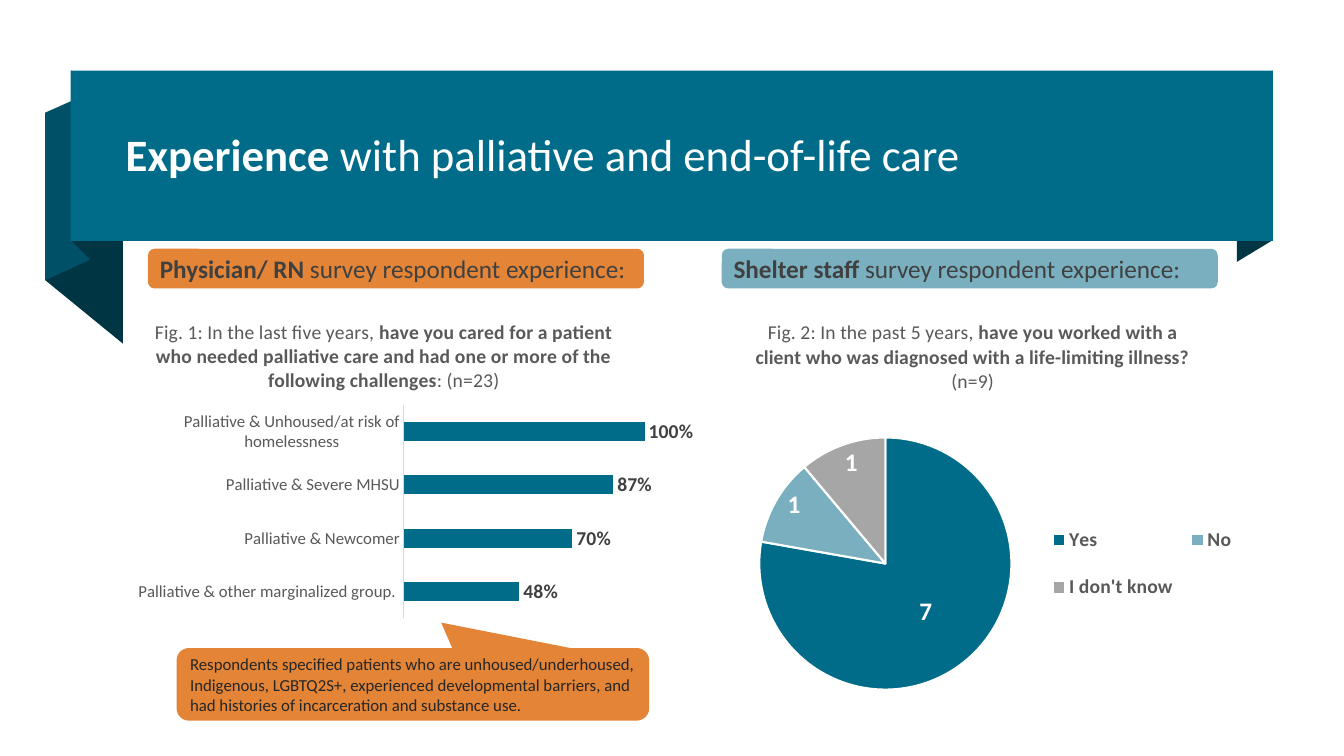
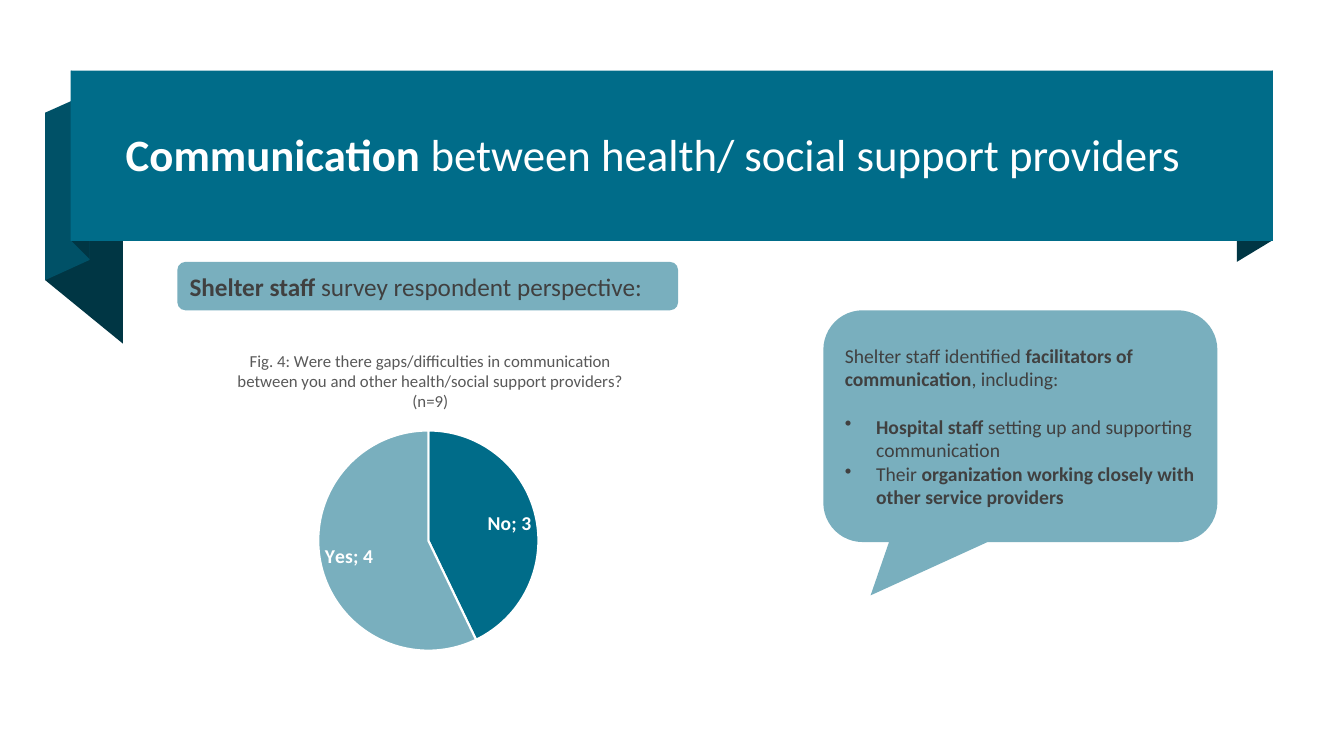
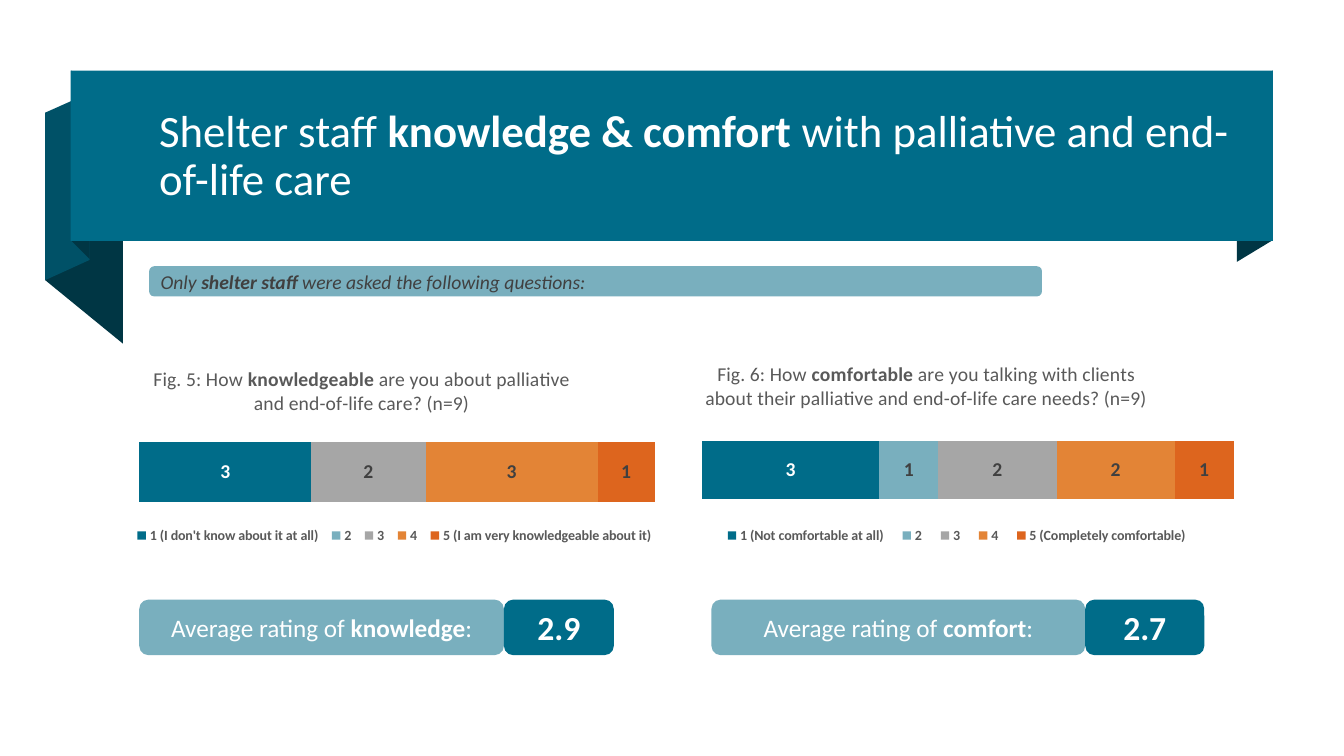
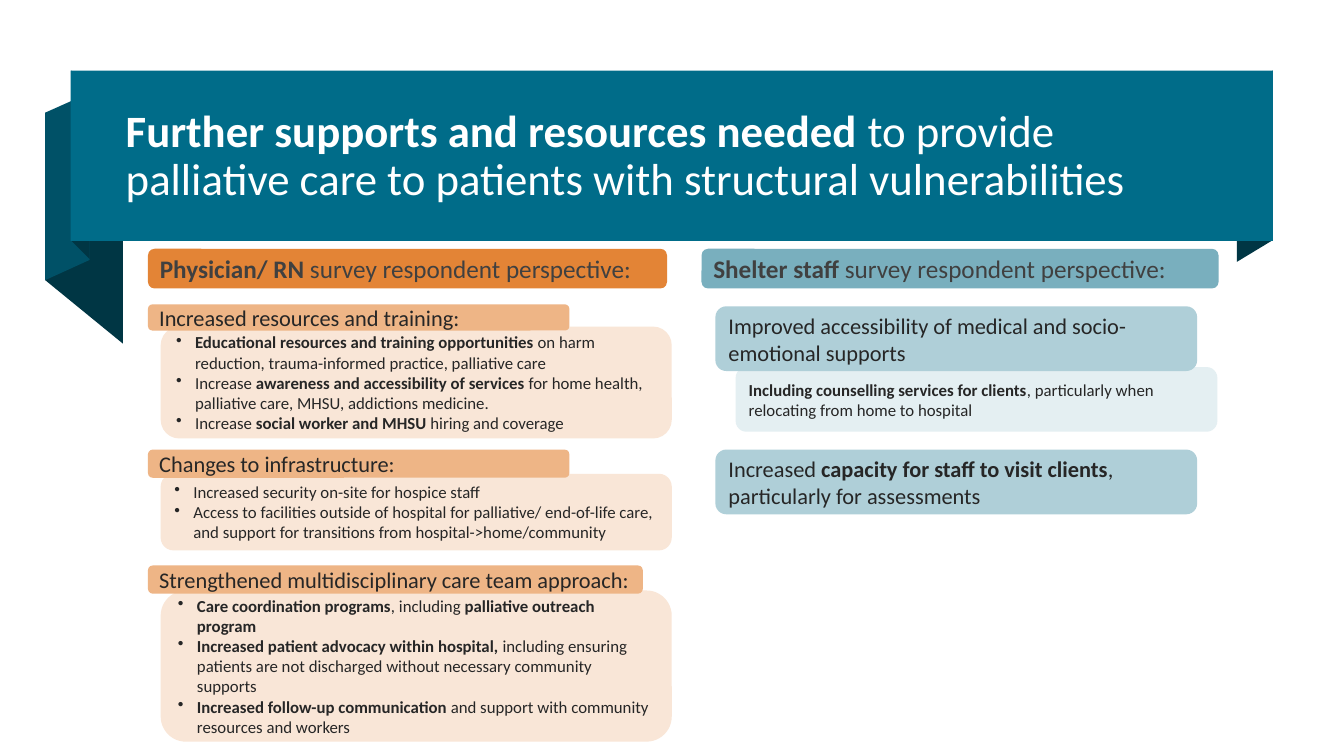
"""Builds four slides of survey results on palliative care."""
import dataclasses
import typing

import lxml.etree
import pptx
import pptx.chart.chart
import pptx.chart.data
import pptx.dml.color
import pptx.dml.fill
import pptx.enum.chart
import pptx.enum.shapes
import pptx.enum.text
import pptx.oxml
import pptx.oxml.ns
import pptx.slide
import pptx.text.text
import pptx.util

Cm = pptx.util.Cm
Pt = pptx.util.Pt
ShapeKind = pptx.enum.shapes.MSO_SHAPE
ChartKind = pptx.enum.chart.XL_CHART_TYPE
LabelPlace = pptx.enum.chart.XL_LABEL_POSITION
LegendPlace = pptx.enum.chart.XL_LEGEND_POSITION
Align = pptx.enum.text.PP_ALIGN

TEAL, DEEP_TEAL, DARK_TEAL = "006C89", "005167", "003644"
BLUE, LIGHT_BLUE, PALE_BLUE = "79AFBE", "AFCFD8", "E4EFF2"
ORANGE, LIGHT_ORANGE, PALE_ORANGE, RUST = "E38436", "EEB586", "F9E6D7", "DD651E"
GREY, AXIS_GREY, WHITE = "A6A6A6", "D9D9D9", "FFFFFF"
INK, TEXT_GREY, CHART_GREY = "262626", "404040", "595959"
FONT = "Calibri"

Area = tuple[float, float, float, float]

RIBBON_FOLDS = [
    (DARK_TEAL, [(32.08, 6.05), (31.17, 6.6), (31.17, 2.31), (32.08, 1.78)]),
    (DARK_TEAL, [(3.1, 8.66), (1.14, 7.06), (1.14, 2.84), (3.1, 4.45)]),
    (DEEP_TEAL, [(2.26, 6.55), (1.14, 7.06), (1.14, 2.84), (2.26, 2.34)]),
    (DARK_TEAL, [(2.26, 6.53), (1.8, 6.07), (1.8, 1.78), (2.26, 2.26)]),
]


@dataclasses.dataclass(frozen=True)
class Box:
    """A filled shape with text; ** marks bold."""

    area: Area
    fill: str
    lines: list[str]
    size: int
    color: str = INK
    kind: ShapeKind = ShapeKind.ROUNDED_RECTANGLE
    align: Align = Align.LEFT
    adjust: tuple[float, ...] = ()
    indent: float = 0
    first_bullet: int = 0
    bullet_gap: int = 0
    italic: bool = False


@dataclasses.dataclass(frozen=True)
class Series:
    """Values, fill colours and label colour of one series."""

    name: str
    values: list[float | None]
    colors: list[str]
    label_color: str = TEXT_GREY


@dataclasses.dataclass(frozen=True)
class Graph:
    """A chart; layouts are fractions of its frame."""

    area: Area
    kind: ChartKind
    title: str
    title_at: tuple[float, float]
    plot_at: Area
    categories: list[str]
    series: list[Series]
    label_place: LabelPlace
    title_size: int = 14
    label_size: int = 14
    number_format: str = "General"
    legend: LegendPlace | None = None
    legend_at: Area = (0, 0, 0, 0)
    legend_size: int = 10
    gap: int = 150
    name_labels: bool = False
    centred_points: tuple[int, ...] = ()


def rgb(color: str) -> pptx.dml.color.RGBColor:
    """Turn a hex string into a colour."""
    return pptx.dml.color.RGBColor.from_string(color)


def paint(fill: pptx.dml.fill.FillFormat, color: str) -> None:
    """Give a solid fill."""
    fill.solid()
    fill.fore_color.rgb = rgb(color)


def finish(shape: typing.Any, color: str) -> None:
    """Fill a shape and remove its line and shadow."""
    shape.shadow.inherit = False
    paint(shape.fill, color)
    shape.line.fill.background()


def style_font(font: pptx.text.text.Font, size: int, color: str,
               bold: bool = False, italic: bool = False) -> None:
    """Format a font."""
    formats = {"name": FONT, "size": Pt(size), "bold": bold, "italic": italic}
    for name, value in formats.items():
        setattr(font, name, value)
    font.color.rgb = rgb(color)


def write(para: typing.Any, text: str, size: int, color: str, italic: bool = False) -> None:
    """Write text in which ** switches bold on and off."""
    for number, piece in enumerate(text.split("**")):
        if piece:
            span = para.add_run()
            span.text = piece
            style_font(span.font, size, color, number % 2 == 1, italic)


def add_bullet(para: typing.Any, indent: float) -> None:
    """Give a paragraph a hanging bullet."""
    properties = para._p.get_or_add_pPr()
    properties.set("marL", str(Cm(indent)))
    properties.set("indent", str(-Cm(indent)))
    bullet = lxml.etree.SubElement(properties, pptx.oxml.ns.qn("a:buChar"))
    bullet.set("char", "•")


def add_box(page: pptx.slide.Slide, box: Box) -> None:
    """Draw a box and its text."""
    shape = page.shapes.add_shape(box.kind, *map(Cm, box.area))
    for number, value in enumerate(box.adjust):
        shape.adjustments[number] = value
    finish(shape, box.fill)
    frame = shape.text_frame
    frame.word_wrap = True
    frame.vertical_anchor = pptx.enum.text.MSO_ANCHOR.MIDDLE
    for number, line in enumerate(box.lines):
        para = frame.add_paragraph() if number else frame.paragraphs[0]
        para.alignment = box.align
        if box.indent and number >= box.first_bullet:
            if number == box.first_bullet and box.bullet_gap:
                para.space_before = Pt(box.bullet_gap)
            add_bullet(para, box.indent)
        write(para, line, box.size, box.color, box.italic)


def place(chart: pptx.chart.chart.Chart, query: str, index: int,
          fractions: tuple[float, ...], inner: bool = False) -> None:
    """Set the manual layout of one part of a chart."""
    part = chart.element.xpath(query)[0]
    for old in part.xpath("c:layout"):
        part.remove(old)
    names = ("x", "y", "w", "h")[:len(fractions)]
    items = '<c:layoutTarget val="inner"/>' if inner else ""
    items += "".join(f'<c:{name}Mode val="edge"/>' for name in names[:2])
    items += "".join(f'<c:{name} val="{value}"/>' for name, value in zip(names, fractions))
    part.insert(index, pptx.oxml.parse_xml(
        f'<c:layout {pptx.oxml.ns.nsdecls("c")}><c:manualLayout>{items}</c:manualLayout></c:layout>'))


def style_axes(chart: pptx.chart.chart.Chart, graph: Graph) -> None:
    """Format bars and axes; only clustered bars show categories."""
    plot = chart.plots[0]
    plot.gap_width = graph.gap
    names, values = chart.category_axis, chart.value_axis
    for axis in (names, values):
        axis.has_major_gridlines = False
    values.visible = False
    if graph.kind == ChartKind.BAR_STACKED_100:
        plot.overlap = 100
        names.visible = False
        return
    values.minimum_scale, values.maximum_scale = 0, 1.2
    names.reverse_order = True
    names.major_tick_mark = pptx.enum.chart.XL_TICK_MARK.NONE
    style_font(names.tick_labels.font, 12, CHART_GREY)
    names.format.line.color.rgb = rgb(AXIS_GREY)
    names.format.line.width = Pt(0.75)


def style_series(drawn: typing.Any, series: Series, graph: Graph) -> None:
    """Colour and label one series."""
    if graph.kind == ChartKind.PIE:
        for number, color in enumerate(series.colors):
            look = drawn.points[number].format
            paint(look.fill, color)
            look.line.color.rgb = rgb(WHITE)
            look.line.width = Pt(1.5)
    else:
        paint(drawn.format.fill, series.colors[0])
        drawn.invert_if_negative = False
    labels = drawn.data_labels
    formats = {
        "show_value": True,
        "show_category_name": graph.name_labels,
        "position": graph.label_place,
        "number_format": graph.number_format,
        "number_format_is_linked": False,
    }
    for name, value in formats.items():
        setattr(labels, name, value)
    style_font(labels.font, graph.label_size, series.label_color, True)
    for number in graph.centred_points:
        label = drawn.points[number].data_label
        style_font(label.font, graph.label_size, series.label_color, True)
        label.position = LabelPlace.CENTER


def add_graph(page: pptx.slide.Slide, graph: Graph) -> None:
    """Draw a chart."""
    data = pptx.chart.data.CategoryChartData()
    data.categories = graph.categories
    for series in graph.series:
        data.add_series(series.name, series.values)
    chart = page.shapes.add_chart(graph.kind, *map(Cm, graph.area), data).chart
    style_font(chart.font, 10, "000000")
    chart.has_title = True
    write(chart.chart_title.text_frame.paragraphs[0], graph.title, graph.title_size, CHART_GREY)
    place(chart, "c:chart/c:title", 1, graph.title_at)
    place(chart, "c:chart/c:plotArea", 0, graph.plot_at, inner=True)
    chart.has_legend = graph.legend is not None
    if chart.has_legend:
        chart.legend.position = graph.legend
        chart.legend.include_in_layout = False
        style_font(chart.legend.font, graph.legend_size, CHART_GREY, True)
        place(chart, "c:chart/c:legend", 1, graph.legend_at)
    is_pie = graph.kind == ChartKind.PIE
    chart.plots[0].vary_by_categories = is_pie
    if not is_pie:
        style_axes(chart, graph)
    for drawn, series in zip(chart.plots[0].series, graph.series):
        style_series(drawn, series, graph)


def add_page(deck: typing.Any, title: str, items: list[Box | Graph], left: float = 2.92) -> None:
    """Add a slide with the ribbon, its title and its items."""
    page = deck.slides.add_slide(deck.slide_layouts[6])
    ribbon = page.shapes.add_group_shape().shapes
    for color, corners in RIBBON_FOLDS:
        points = [(Cm(x), Cm(y)) for x, y in corners]
        builder = ribbon.build_freeform(*points[0])
        builder.add_line_segments(points[1:], close=True)
        finish(builder.convert_to_shape(), color)
    band = ribbon.add_shape(ShapeKind.RECTANGLE, Cm(1.78), Cm(1.78), Cm(30.3), Cm(4.29))
    finish(band, TEAL)
    frame = page.shapes.add_textbox(Cm(left), Cm(2.11), Cm(27.79), Cm(3.68)).text_frame
    frame.word_wrap = True
    frame.vertical_anchor = pptx.enum.text.MSO_ANCHOR.MIDDLE
    frame.paragraphs[0].line_spacing = 0.9
    write(frame.paragraphs[0], title, 32, WHITE)
    for item in items:
        if isinstance(item, Graph):
            add_graph(page, item)
        else:
            add_box(page, item)


def header(left: float, width: float, group: str, topic: str, fill: str,
           top: float = 6.27, height: float = 1) -> Box:
    """Describe the heading of a respondent group."""
    text = f"**{group}** survey respondent {topic}:"
    return Box((left, top, width, height), fill, [text], 18, TEXT_GREY)


def rating(left: float, width: float, badge_width: float, topic: str, score: str) -> list[Box]:
    """Describe an average rating and its score."""
    return [
        Box((left, 15.11, width, 1.4), BLUE, [f"Average rating of **{topic}**:"], 18, WHITE,
            align=Align.CENTER),
        Box((left + width, 15.11, badge_width, 1.4), TEAL, [f"**{score}**"], 24, WHITE,
            align=Align.CENTER),
    ]


def scale_graph(left: float, width: float, title: str, title_at: tuple[float, float],
                plot_at: Area, legend_at: Area, ends: tuple[str, str],
                counts: list[int | None]) -> Graph:
    """Describe a stacked bar of answers from 1 to 5."""
    names = [f"1 ({ends[0]})", "2", "3", "4", f"5 ({ends[1]})"]
    colors = [TEAL, BLUE, GREY, ORANGE, RUST]
    series = [Series(name, [count], [color], WHITE if color == TEAL else TEXT_GREY)
              for name, count, color in zip(names, counts, colors)]
    return Graph((left, 8.84, width, 5.82), ChartKind.BAR_STACKED_100, title, title_at, plot_at,
                 ["1"], series, LabelPlace.CENTER,
                 legend=LegendPlace.BOTTOM, legend_at=legend_at)


def need(top: float, height: float, tab_top: float, tab_width: float, tab_height: float,
         title: str, lines: list[str]) -> list[Box]:
    """Describe a bulleted card under its tab."""
    return [
        Box((4.05, top, 12.88, height), PALE_ORANGE, lines, 12, indent=0.48),
        Box((3.73, tab_top, tab_width, tab_height), LIGHT_ORANGE, [title], 16),
    ]


def main() -> None:
    """Build and save the deck."""
    deck = pptx.Presentation()
    deck.slide_width, deck.slide_height = Cm(33.87), Cm(19.05)
    clinicians, shelter = "Physician/ RN", "Shelter staff"

    add_page(deck, "**Experience** with palliative and end-of-life care", [
        Graph((2.9, 7.65, 15.49, 9.8), ChartKind.BAR_CLUSTERED,
              "Fig. 1: In the last five years, **have you cared for a patient who needed palliative "
              "care and had one or more of the following challenges**: (n=23)",
              (0.06, 0.03), (0.47, 0.26, 0.47, 0.55),
              ["Palliative & Unhoused/at risk of homelessness", "Palliative & Severe MHSU",
               "Palliative & Newcomer", "Palliative & other marginalized group. "],
              [Series("Series 1", [1, 0.87, 0.7, 0.48], [TEAL])],
              LabelPlace.OUTSIDE_END, number_format="0%", gap=182),
        Graph((17.22, 7.62, 14.55, 11.35), ChartKind.PIE,
              "Fig. 2: In the past 5 years, **have you worked with a client who was diagnosed "
              "with a life-limiting illness?** (n=9)",
              (0.12, 0.03), (0.12, 0.3, 0.46, 0.56), ["Yes", "No", "I don't know"],
              [Series("Series 1", [7, 1, 1], [TEAL, BLUE, GREY], WHITE)],
              LabelPlace.BEST_FIT, label_size=18, legend=LegendPlace.RIGHT,
              legend_at=(0.62, 0.45, 0.35, 0.26), legend_size=14, centred_points=(0,)),
        header(3.73, 12.5, clinicians, "experience", ORANGE),
        header(18.19, 12.5, shelter, "experience", BLUE),
        Box((4.45, 16.33, 11.91, 1.83), ORANGE,
            ["Respondents specified patients who are unhoused/underhoused, Indigenous, LGBTQ2S+, "
             "experienced developmental barriers, and had histories of incarceration and "
             "substance use."],
            12, kind=ShapeKind.ROUNDED_RECTANGULAR_CALLOUT, adjust=(0.06, -0.85, 0.17)),
    ])

    add_page(deck, "**Communication** between health/ social support providers", [
        header(4.47, 12.62, shelter, "perspective", BLUE, 6.6, 1.22),
        Graph((3.53, 8.38, 13.21, 9.12), ChartKind.PIE,
              "Fig. 4: Were there gaps/difficulties in communication between you and other "
              "health/social support providers? (n=9)",
              (0.18, 0.04), (0.34, 0.27, 0.42, 0.61), ["No", "Yes"],
              [Series("Series 1", [3, 4], [TEAL, BLUE], WHITE)],
              LabelPlace.BEST_FIT, title_size=12, name_labels=True),
        Box((20.75, 7.82, 9.93, 5.84), BLUE,
            ["Shelter staff identified **facilitators of communication**, including:",
             "**Hospital staff** setting up and supporting communication",
             "Their **organization working closely with other service providers**"],
            14, TEXT_GREY, ShapeKind.ROUNDED_RECTANGULAR_CALLOUT, adjust=(-0.38, 0.73, 0.17),
            indent=0.79, first_bullet=1, bullet_gap=17),
    ])

    add_page(deck, "Shelter staff **knowledge & comfort** with palliative and end-of-life care", [
        scale_graph(3.1, 13.82,
                    "Fig. 5: How **knowledgeable** are you about palliative and end-of-life care? "
                    "(n=9)",
                    (0.05, 0.05), (0.03, 0.2, 0.94, 0.65), (0.01, 0.74, 0.97, 0.12),
                    ("I don't know about it at all", "I am very knowledgeable about it"),
                    [3, None, 2, 3, 1]),
        scale_graph(17.27, 14.25,
                    "Fig. 6: How **comfortable** are you talking with clients about their "
                    "palliative and end-of-life care needs? (n=9)",
                    (0.03, 0.03), (0.03, 0.2, 0.94, 0.63), (0.05, 0.74, 0.86, 0.12),
                    ("Not comfortable at all", "Completely comfortable"),
                    [3, 1, 2, 2, 1]),
        *rating(3.51, 9.19, 2.77, "knowledge", "2.9"),
        *rating(17.93, 9.42, 3, "comfort", "2.7"),
        Box((3.76, 6.71, 22.5, 0.76), BLUE,
            ["Only **shelter staff** were asked the following questions:"], 14, TEXT_GREY,
            italic=True),
    ], left=3.76)

    add_page(deck, "**Further supports and resources needed** to provide palliative care to "
             "patients with structural vulnerabilities", [
        header(3.73, 13.08, clinicians, "perspective", ORANGE),
        header(17.68, 13.03, shelter, "perspective", BLUE),
        *need(8.23, 2.82, 7.67, 10.62, 0.66, "Increased resources and training:", [
            "**Educational resources and training opportunities** on harm reduction, "
            "trauma-informed practice, palliative care",
            "Increase **awareness and accessibility of services** for home health, palliative "
            "care, MHSU, addictions medicine.",
            "Increase **social worker and MHSU** hiring and coverage"]),
        *need(11.94, 1.93, 11.33, 10.62, 0.71, "Changes to infrastructure:", [
            "Increased security on-site for hospice staff",
            "Access to facilities outside of hospital for palliative/ end-of-life care, and "
            "support for transitions from hospital->home/community"]),
        *need(14.88, 3.81, 14.25, 12.47, 0.71,
              "Strengthened multidisciplinary care team approach:", [
                  "**Care coordination programs**, including **palliative outreach program**",
                  "**Increased patient advocacy within hospital,** including ensuring patients "
                  "are not discharged without necessary community supports",
                  "**Increased follow-up communication** and support with community resources "
                  "and workers"]),
        Box((18.03, 11.33, 12.14, 1.63), LIGHT_BLUE,
            ["Increased **capacity for staff to visit clients**, particularly for assessments"],
            16),
        Box((18.54, 9.25, 12.14, 1.63), PALE_BLUE,
            ["**Including counselling services for clients**, particularly when relocating from "
             "home to hospital"], 12),
        Box((18.03, 7.72, 12.14, 1.63), LIGHT_BLUE,
            ["Improved accessibility of medical and socio-emotional supports"], 16),
    ])

    deck.save("out.pptx")


if __name__ == "__main__":
    main()
